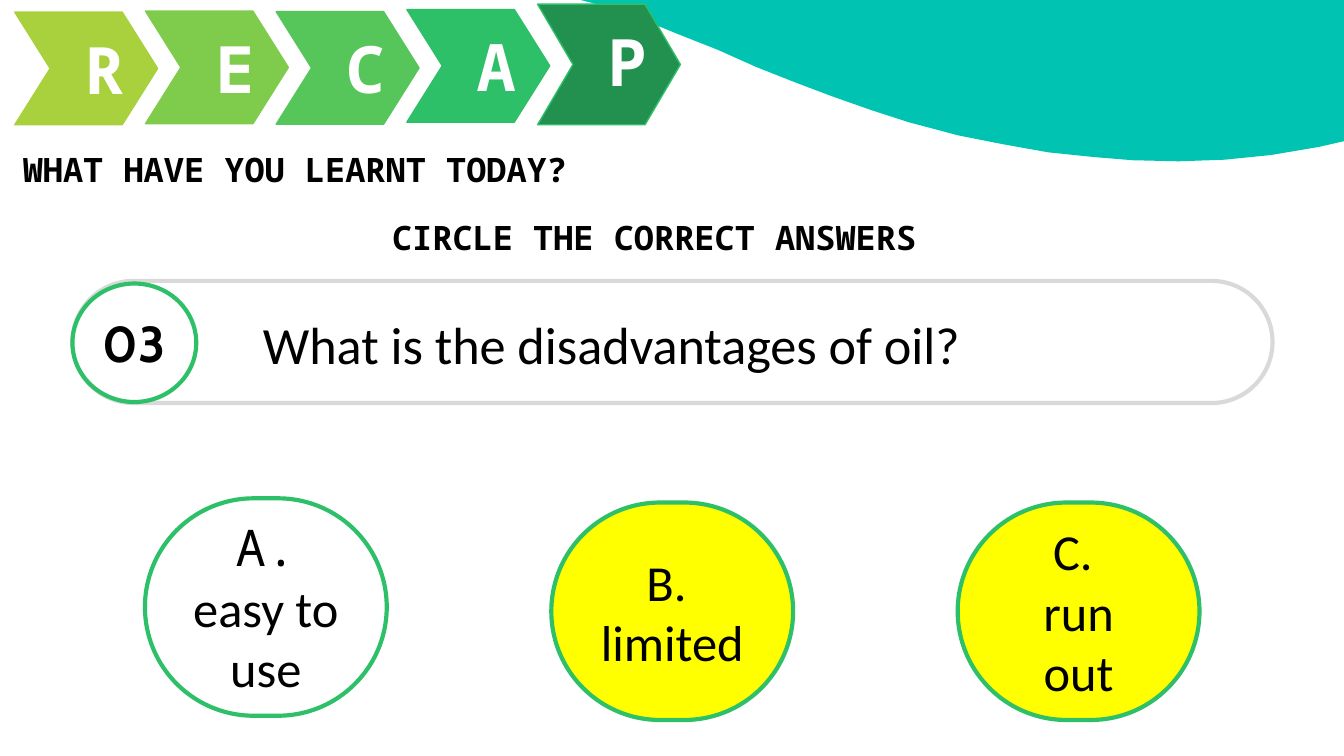
"""Build the recap quiz slide about the disadvantages of oil."""
from dataclasses import dataclass

import pptx
import pptx.dml.color
import pptx.enum.shapes
import pptx.enum.text
import pptx.util

Cm = pptx.util.Cm
RGBColor = pptx.dml.color.RGBColor
Shape = pptx.enum.shapes.MSO_SHAPE
Anchor = pptx.enum.text.MSO_ANCHOR
Align = pptx.enum.text.PP_ALIGN

BLACK = RGBColor(0x00, 0x00, 0x00)
WHITE = RGBColor(0xFF, 0xFF, 0xFF)
YELLOW = RGBColor(0xFF, 0xFF, 0x00)
GREY = RGBColor(0xD9, 0xD9, 0xD9)
TEAL = RGBColor(0x00, 0xC3, 0xB1)
LIME = RGBColor(0xA8, 0xD1, 0x3D)
LIGHT_GREEN = RGBColor(0x7F, 0xCB, 0x4C)
MID_GREEN = RGBColor(0x57, 0xC6, 0x5A)
GREEN = RGBColor(0x2E, 0xC0, 0x68)
DARK_GREEN = RGBColor(0x22, 0x90, 0x4E)

MONO, SANS, NUMBER_FONT = "Noto Sans Mono", "Calibri", "Cabin"
INSET = 0.25
SLIDE_WIDTH, SLIDE_HEIGHT = 25.4, 14.29
WAVE = [
    (10.97, 0), (11.28, 0.08), (11.79, 0.28), (12.29, 0.43), (12.8, 0.64),
    (13.56, 0.94), (14.3, 1.27), (15.06, 1.57), (15.75, 1.83), (16.46, 2.08),
    (17.17, 2.31), (18.11, 2.56), (18.97, 2.73), (19.81, 2.88), (20.68, 2.97),
    (21.41, 3.03), (22.28, 3.05), (23.14, 3.02), (24.03, 2.93), (24.92, 2.78),
    (SLIDE_WIDTH, 2.67), (SLIDE_WIDTH, 0),
]


@dataclass
class Box:
    left: float
    top: float
    width: float
    height: float

    def lengths(self) -> list:
        return [Cm(value) for value in (self.left, self.top, self.width, self.height)]


@dataclass
class Run:
    text: str
    size: float
    font: str = SANS
    bold: bool = False
    color: RGBColor = BLACK


@dataclass
class Chevron:
    letter: str
    top: float
    height: float
    fill: RGBColor
    line: RGBColor


@dataclass
class Answer:
    top: float
    fill: RGBColor
    paragraphs: list[list[Run]]


CHEVRONS = [
    Chevron("R", 0.23, 2.13, LIME, LIME),
    Chevron("E", 0.21, 2.13, LIGHT_GREEN, LIGHT_GREEN),
    Chevron("C", 0.22, 2.13, MID_GREEN, MID_GREEN),
    Chevron("A", 0.18, 2.13, GREEN, GREEN),
    Chevron("P", 0.08, 2.28, DARK_GREEN, GREEN),
]
ANSWERS = [
    Answer(9.42, WHITE, [[Run("A. ", 27, MONO), Run("easy to use", 27)]]),
    Answer(9.5, YELLOW, [[Run("B. ", 27)], [Run("limited", 27)]]),
    Answer(9.5, YELLOW, [[Run("C. ", 27)], [Run("run out", 27)]]),
]


def write_text(shape, paragraphs: list[list[Run]], align=Align.LEFT, anchor=Anchor.MIDDLE,
               left: float = INSET, right: float = INSET) -> None:
    frame = shape.text_frame
    frame.word_wrap = True
    frame.auto_size = pptx.enum.text.MSO_AUTO_SIZE.NONE
    frame.vertical_anchor = anchor
    frame.margin_left, frame.margin_right = Cm(left), Cm(right)
    frame.margin_top = frame.margin_bottom = Cm(INSET)
    for index, runs in enumerate(paragraphs):
        paragraph = frame.add_paragraph() if index else frame.paragraphs[0]
        paragraph.alignment = align
        for item in runs:
            run = paragraph.add_run()
            run.text = item.text
            run.font.size = pptx.util.Pt(item.size)
            run.font.name = item.font
            run.font.bold = item.bold
            run.font.color.rgb = item.color


def add_outlined(slide, kind, box: Box, fill: RGBColor, line: RGBColor,
                 weight: float = 2.25, adjustment: float | None = None):
    shape = slide.shapes.add_shape(kind, *box.lengths())
    shape.shadow.inherit = False
    shape.fill.solid()
    shape.fill.fore_color.rgb = fill
    shape.line.color.rgb = line
    shape.line.width = pptx.util.Pt(weight)
    if adjustment is not None:
        shape.adjustments[0] = adjustment
    return shape


def add_wave(slide) -> None:
    start, *rest = [(Cm(x), Cm(y)) for x, y in WAVE]
    builder = slide.shapes.build_freeform(*start)
    builder.add_line_segments(rest)
    wave = builder.convert_to_shape()
    wave.shadow.inherit = False
    wave.fill.solid()
    wave.fill.fore_color.rgb = TEAL
    wave.line.fill.background()


def add_chevron(slide, chevron: Chevron, left: float) -> None:
    box = Box(left, chevron.top, 2.7, chevron.height)
    add_outlined(slide, Shape.CHEVRON, box, chevron.fill, chevron.line, 0.75, 0.67 / chevron.height)
    letter_box = Box(left + 1.07, chevron.top + 0.07, 0.86, 1.47)
    letter = slide.shapes.add_textbox(*letter_box.lengths())
    write_text(letter, [[Run(chevron.letter, 35, MONO, True, WHITE)]], Align.CENTER, Anchor.TOP)


def add_answer(slide, answer: Answer, left: float) -> None:
    box = Box(left, answer.top, 4.57, 4.11)
    shape = add_outlined(slide, Shape.ROUNDED_RECTANGLE, box, answer.fill, GREEN, adjustment=0.5)
    write_text(shape, answer.paragraphs, Align.CENTER)


def add_question(slide) -> None:
    bar = Box(1.37, 5.31, 22.68, 2.31)
    add_outlined(slide, Shape.ROUNDED_RECTANGLE, bar, WHITE, GREY, adjustment=0.5)
    question = slide.shapes.add_textbox(*Box(3.45, 5.92, 20.19, 1.14).lengths())
    write_text(question, [[Run("What is the disadvantages of oil?", 28)]], left=1.52, right=0.51)
    number = add_outlined(slide, Shape.OVAL, Box(1.37, 5.36, 2.34, 2.24), WHITE, GREEN)
    write_text(number, [[Run("03", 27, NUMBER_FONT, True)]], Align.CENTER, left=0, right=0)


def main() -> None:
    presentation = pptx.Presentation()
    presentation.slide_width, presentation.slide_height = Cm(SLIDE_WIDTH), Cm(SLIDE_HEIGHT)
    slide = presentation.slides.add_slide(presentation.slide_layouts[5])
    add_wave(slide)
    for index, chevron in enumerate(CHEVRONS):
        add_chevron(slide, chevron, 0.28 + 2.47 * index)
    add_question(slide)
    for index, answer in enumerate(ANSWERS):
        add_answer(slide, answer, 2.74 + 7.68 * index)

    title = slide.shapes.title
    title.left, title.top, title.width, title.height = Box(0.18, 2.49, 12.9, 1.4).lengths()
    write_text(title, [[Run("WHAT HAVE YOU LEARNT TODAY?", 18, MONO, True)]])
    instruction = slide.shapes.add_textbox(*Box(7.16, 3.78, 12.9, 1.4).lengths())
    write_text(instruction, [[Run("CIRCLE THE CORRECT ANSWERS", 18, MONO, True)]])
    presentation.save("out.pptx")


if __name__ == "__main__":
    main()
